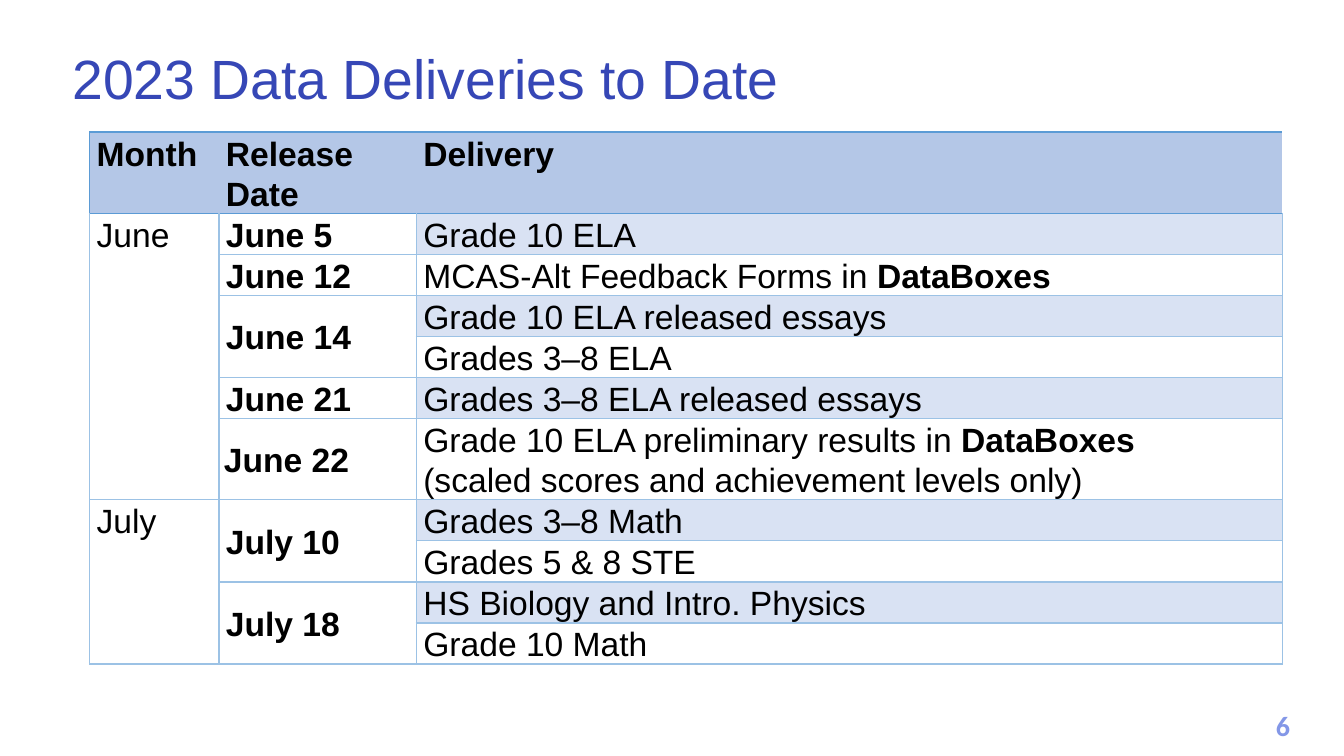
from lxml.etree import SubElement
from pptx import Presentation
from pptx.dml.color import RGBColor
from pptx.enum.text import MSO_ANCHOR, MSO_AUTO_SIZE, PP_ALIGN
from pptx.oxml.ns import qn
from pptx.util import Pt


def write_text(frame, text, size=24, color="000000", font="Arial", bold=False,
               align=PP_ALIGN.LEFT, line_spacing=None, space_after=None):
    """Fill the first paragraph; *stars* switch bold, a newline breaks the line."""
    paragraph = frame.paragraphs[0]
    paragraph.alignment = align
    paragraph.line_spacing = line_spacing
    paragraph.space_after = space_after
    for line_number, line in enumerate(text.split("\n")):
        if line_number:
            paragraph.add_line_break()
        for part_number, part in enumerate(line.split("*")):
            if part:
                run = paragraph.add_run()
                run.text = part
                run.font.name = font
                run.font.size = Pt(size)
                run.font.bold = bold or part_number % 2 == 1
                run.font.color.rgb = RGBColor.from_string(color)


def add_border(cell, side, color):
    """Draw one cell edge, or hide it when color is None."""
    line = SubElement(cell._tc.get_or_add_tcPr(), qn("a:ln" + side), w=str(Pt(1)))
    if color:
        fill = SubElement(line, qn("a:solidFill"))
        SubElement(fill, qn("a:srgbClr"), val=color)
    else:
        SubElement(line, qn("a:noFill"))


presentation = Presentation()
presentation.slide_width = Pt(960)
presentation.slide_height = Pt(540)
slide = presentation.slides.add_slide(presentation.slide_layouts[5])

# Title
title = slide.shapes.title
title.left, title.top, title.width, title.height = Pt(44.6), Pt(19.4), Pt(871), Pt(64)
title.text_frame.auto_size = MSO_AUTO_SIZE.NONE
title.text_frame.vertical_anchor = MSO_ANCHOR.BOTTOM
write_text(title.text_frame, "2023 Data Deliveries to Date", size=39.5,
           color="3647B6", line_spacing=0.9)

# Delivery schedule: an empty month or date continues the cell above
schedule = [
    ("Month", "Release Date", "Delivery"),
    ("June", "June 5", "Grade 10 ELA"),
    ("", "June 12", "MCAS-Alt Feedback Forms in *DataBoxes*"),
    ("", "June 14", "Grade 10 ELA released essays"),
    ("", "", "Grades 3–8 ELA"),
    ("", "June 21", "Grades 3–8 ELA released essays"),
    ("", "June 22", "Grade 10 ELA preliminary results in *DataBoxes*\n"
                    "(scaled scores and achievement levels only)"),
    ("July", "July 10", "Grades 3–8 Math"),
    ("", "", "Grades 5 & 8 STE"),
    ("", "July 18", "HS Biology and Intro. Physics"),
    ("", "", "Grade 10 Math"),
]
column_widths = [92.4, 141, 618.6]
centered_dates = ["June 14", "June 22", "July 10", "July 18"]
two_line_rows = [0, 6]

table = slide.shapes.add_table(len(schedule), 3, Pt(64), Pt(94.3),
                               Pt(sum(column_widths)), Pt(380)).table
table.first_row = False
table.horz_banding = False
for column, width in zip(table.columns, column_widths):
    column.width = Pt(width)

# Cells
for row_number, entries in enumerate(schedule):
    table.rows[row_number].height = Pt(58 if row_number in two_line_rows else 29.3)
    is_header = row_number == 0
    for column_number, text in enumerate(entries):
        cell = table.cell(row_number, column_number)
        cell.margin_left = Pt(3.6 if text == "June 22" else 5)
        cell.margin_right = Pt(5)
        cell.margin_top = Pt(0.7)
        cell.margin_bottom = Pt(0)
        if text in centered_dates:
            cell.vertical_anchor = MSO_ANCHOR.MIDDLE

        # Borders and banding
        if is_header:
            edges = {"L": None if column_number else "5B9BD5", "R": None,
                     "T": "5B9BD5", "B": "5B9BD5"}
        else:
            edges = {"L": "9CC2E5", "R": "9CC2E5",
                     "T": "5B9BD5" if row_number == 1 else "9CC2E5", "B": "9CC2E5"}
        for side, color in edges.items():
            add_border(cell, side, color)
        if is_header:
            background = "B4C7E7"
        elif column_number == 2 and row_number % 2:
            background = "D9E2F3"
        else:
            background = "FFFFFF"
        cell.fill.solid()
        cell.fill.fore_color.rgb = RGBColor.from_string(background)

        if text:
            write_text(cell.text_frame, text, bold=is_header or column_number == 1,
                       line_spacing=1.07, space_after=Pt(8))

# Merge each month and date with its continuation rows
for column_number in (0, 1):
    starts = [row for row, entries in enumerate(schedule) if entries[column_number]]
    for start, following in zip(starts, starts[1:] + [len(schedule)]):
        if following - start > 1:
            table.cell(start, column_number).merge(
                table.cell(following - 1, column_number))

# Slide number
number_box = slide.shapes.add_textbox(Pt(894.2), Pt(502.6), Pt(44.6), Pt(31.7))
number_box.text_frame.word_wrap = True
write_text(number_box.text_frame, "6", size=20, color="8397E7", font="Calibri",
           bold=True, align=PP_ALIGN.CENTER)

presentation.save("out.pptx")
